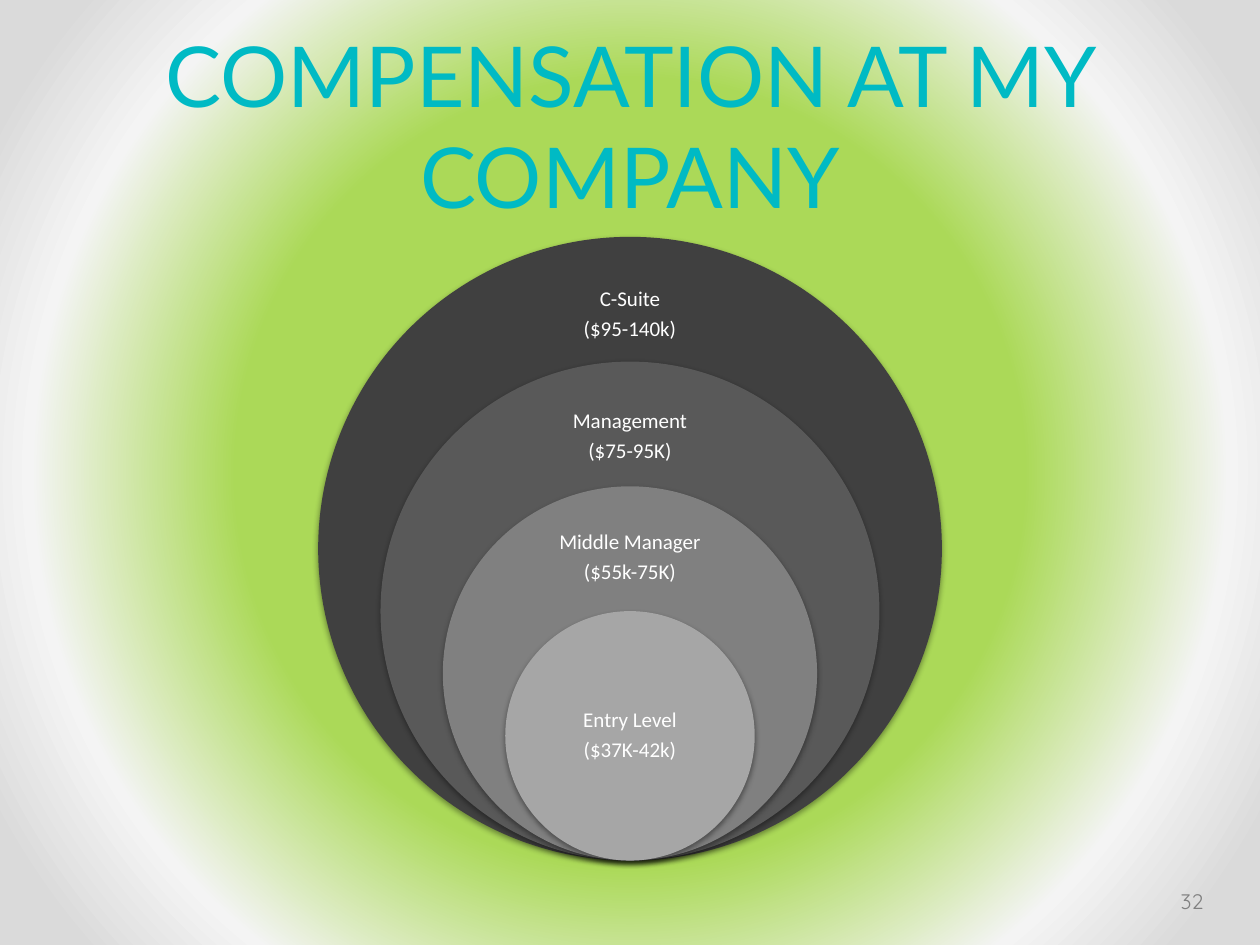
from dataclasses import dataclass

from lxml.etree import SubElement
from pptx import Presentation
from pptx.dml.color import RGBColor
from pptx.enum.shapes import MSO_SHAPE as Shape
from pptx.enum.text import MSO_ANCHOR as Anchor, MSO_AUTO_SIZE as Fit, PP_ALIGN as Align
from pptx.oxml.ns import qn
from pptx.util import Inches, Pt


@dataclass(frozen=True)
class Theme:
    title: str = "00BAC4"
    label: str = "FFFFFF"
    number: str = "808080"
    shadow: str = "000000"
    glow: tuple = ((50, "ABD958"), (76, "F4F4F4"), (92, "DADADA"))
    head_font: str = "Lato"
    body_font: str = "Calibri"
    number_font: str = "Quicksand"
    head_size: int = 48
    body_size: int = 12


@dataclass(frozen=True)
class Ring:
    units: int     # diameter in grid units
    color: str
    level: str
    pay: str
    depth: float   # middle of the label, as a share of the diameter


THEME = Theme()
WIDTH, HEIGHT = 10, 7.5
UNIT = 0.99
BASE = 6.83        # all rings touch here
LABEL_W, LABEL_H = 2, 0.6
RINGS = (
    Ring(5, "404040", "C-Suite", "($95-140k)", 0.125),
    Ring(4, "595959", "Management", "($75-95K)", 0.15),
    Ring(3, "808080", "Middle Manager", "($55k-75K)", 0.19),
    Ring(2, "A6A6A6", "Entry Level", "($37K-42k)", 0.5),
)


def box(*sides: float) -> list:
    return [Inches(side) for side in sides]


def style(frame, font: str, size: int, color: str) -> None:
    for para in frame.paragraphs:
        for run in para.runs:
            run.font.name = font
            run.font.size = Pt(size)
            run.font.color.rgb = RGBColor.from_string(color)


def add_color(parent, color: str):
    return SubElement(parent, qn("a:srgbClr"), val=color)


def paint_back(slide) -> None:
    """Fill the background with a round gradient about the centre."""
    fill = slide.background.fill
    fill.gradient()
    grad = slide.background._cSld.bg.bgPr.find(qn("a:gradFill"))
    for child in list(grad):
        grad.remove(child)
    stops = SubElement(grad, qn("a:gsLst"))
    for share, color in THEME.glow:
        add_color(SubElement(stops, qn("a:gs"), pos=str(share * 1000)), color)
    way = SubElement(grad, qn("a:path"), {"path": "circle"})
    SubElement(way, qn("a:fillToRect"), {side: "50000" for side in "ltrb"})


def add_shadow(shape) -> None:
    shape.shadow.inherit = False
    effects = shape._element.spPr.find(qn("a:effectLst"))
    outer = SubElement(effects, qn("a:outerShdw"), blurRad=str(Pt(3.1)),
                       dist=str(Pt(1.6)), dir="5400000", rotWithShape="0")
    SubElement(add_color(outer, THEME.shadow), qn("a:alpha"), val="38000")


def add_title(slide, text: str) -> None:
    title = slide.shapes.title
    title.left, title.top, title.width, title.height = box(0.5, 0.39, 9, 1.45)
    frame = title.text_frame
    frame.text = text
    frame.word_wrap = True
    frame.auto_size = Fit.NONE
    frame.vertical_anchor = Anchor.BOTTOM
    para = frame.paragraphs[0]
    para.alignment = Align.CENTER
    para.line_spacing = Pt(58)
    style(frame, THEME.head_font, THEME.head_size, THEME.title)


def add_ring(slide, ring: Ring) -> None:
    size = ring.units * UNIT
    top = BASE - size
    disc = slide.shapes.add_shape(
        Shape.OVAL, *box((WIDTH - size) / 2, top, size, size))
    disc.fill.solid()
    disc.fill.fore_color.rgb = RGBColor.from_string(ring.color)
    disc.line.fill.background()
    add_shadow(disc)

    middle = top + ring.depth * size
    label = slide.shapes.add_textbox(
        *box((WIDTH - LABEL_W) / 2, middle - LABEL_H / 2, LABEL_W, LABEL_H))
    frame = label.text_frame
    frame.text = f"{ring.level}\n{ring.pay}"
    frame.word_wrap = True
    frame.vertical_anchor = Anchor.MIDDLE
    for para in frame.paragraphs:
        para.alignment = Align.CENTER
        para.line_spacing = 0.9
        para.space_after = Pt(4.2)
    style(frame, THEME.body_font, THEME.body_size, THEME.label)


def add_number(slide, text: str) -> None:
    frame = slide.shapes.add_textbox(*box(9.34, 6.95, 0.61, 0.4)).text_frame
    frame.text = text
    frame.word_wrap = True
    frame.vertical_anchor = Anchor.MIDDLE
    frame.margin_left = Inches(0.03)
    frame.margin_right = Inches(0.05)
    style(frame, THEME.number_font, THEME.body_size, THEME.number)


def main() -> None:
    deck = Presentation()
    deck.slide_width, deck.slide_height = box(WIDTH, HEIGHT)
    slide = deck.slides.add_slide(deck.slide_layouts[5])
    paint_back(slide)
    add_title(slide, "COMPENSATION AT MY COMPANY")
    for ring in RINGS:
        add_ring(slide, ring)
    add_number(slide, "32")
    deck.save("out.pptx")


if __name__ == "__main__":
    main()
